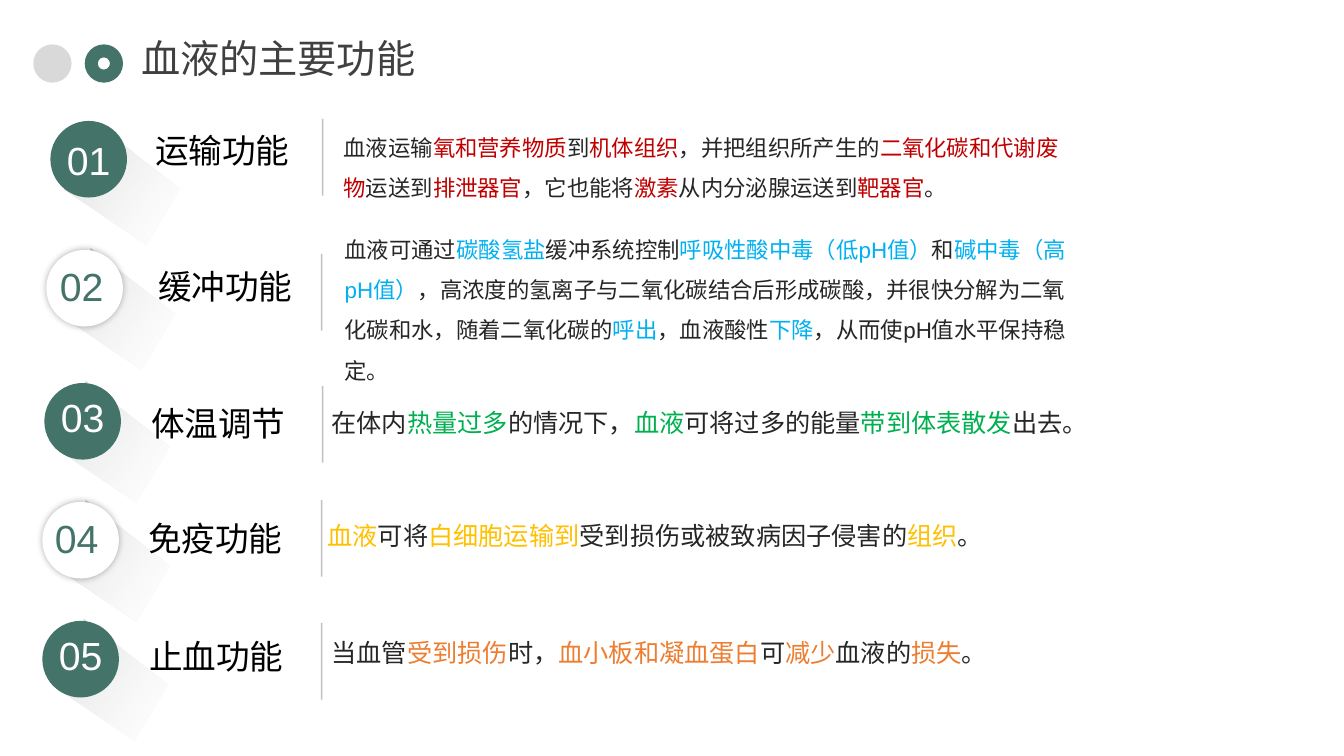
from dataclasses import dataclass

from lxml import etree
from pptx import Presentation
from pptx.dml.color import RGBColor
from pptx.enum.shapes import MSO_CONNECTOR, MSO_SHAPE
from pptx.enum.text import MSO_ANCHOR, MSO_AUTO_SIZE, PP_ALIGN
from pptx.oxml import parse_xml
from pptx.oxml.ns import nsdecls, qn
from pptx.util import Inches, Pt

GREEN = RGBColor(0x44, 0x74, 0x69)
LIGHT_GRAY = RGBColor(0xD9, 0xD9, 0xD9)
RULE_GRAY = RGBColor(0x80, 0x80, 0x80)
TITLE_GRAY = RGBColor(0x40, 0x40, 0x40)
BODY_GRAY = RGBColor(0x26, 0x26, 0x26)
BLACK = RGBColor(0, 0, 0)
WHITE = RGBColor(0xFF, 0xFF, 0xFF)
RED = RGBColor(0xC0, 0, 0)
BLUE = RGBColor(0, 0xB0, 0xF0)
LEAF = RGBColor(0, 0xB0, 0x50)
GOLD = RGBColor(0xFF, 0xC0, 0)
ORANGE = RGBColor(0xED, 0x7D, 0x31)

FONT = "Arial"
CIRCLE_SIZE = 0.76
RAY_CORNERS = [(0, 0.59), (0.42, 0), (1.12, 0.78), (0.7, 1.27)]
RAY_GRADIENT = f"""<a:gradFill rotWithShape="1" {nsdecls('a')}><a:gsLst>
<a:gs pos="0"><a:srgbClr val="F6F8FC"><a:alpha val="0"/></a:srgbClr></a:gs>
<a:gs pos="65000"><a:srgbClr val="CCCDCE"><a:alpha val="40000"/></a:srgbClr></a:gs>
<a:gs pos="100000"><a:srgbClr val="BFBFBF"/></a:gs>
</a:gsLst><a:lin ang="13500000" scaled="0"/></a:gradFill>"""
CIRCLE_GLOW = f"""<a:effectLst {nsdecls('a')}><a:outerShdw blurRad="63500" dist="0" dir="0">
<a:srgbClr val="000000"><a:alpha val="30000"/></a:srgbClr></a:outerShdw></a:effectLst>"""


@dataclass
class BloodFunction:
    number: str
    heading: str
    description: str
    highlight: RGBColor
    circle: tuple[float, float]
    ray: tuple[float, float]
    number_at: tuple[float, float]
    heading_at: tuple[float, float]
    rule_at: tuple[float, float]
    description_at: tuple[float, float]
    description_height: float = 0.35
    size: int = 18
    spacing: object = Pt(18)
    filled: bool = True


FUNCTIONS = [
    BloodFunction(
        "01", "运输功能",
        "血液运输|氧和营养物质|到|机体组织|，并把组织所产生的|二氧化碳和代谢废物|运送到|排泄器官|"
        "，它也能将|激素|从内分泌腺运送到|靶器官|。",
        RED, (0.5, 1.2), (0.64, 1.19), (0.25, 1.3), (1.44, 1.24), (3.2, 1.18),
        (3.31, 1.15), 0.86, 16, 1.5),
    BloodFunction(
        "02", "缓冲功能",
        "血液可通过|碳酸氢盐|缓冲系统控制|呼吸性酸中毒（低pH值）|和|碱中毒（高pH值）|"
        "，高浓度的氢离子与二氧化碳结合后形成碳酸，并很快分解为二氧化碳和水，随着二氧化碳的|"
        "呼出|，血液酸性|下降|，从而使pH值水平保持稳定。",
        BLUE, (0.46, 2.48), (0.59, 2.43), (0.18, 2.55), (1.47, 2.59), (3.19, 2.52),
        (3.32, 2.16), 1.67, 16, 1.5, filled=False),
    BloodFunction(
        "03", "体温调节",
        "在体内|热量过多|的情况下，|血液|可将过多的能量|带到体表散发|出去。",
        LEAF, (0.44, 3.8), (0.54, 3.75), (0.19, 3.85), (1.4, 3.95), (3.2, 3.83),
        (3.19, 4.04)),
    BloodFunction(
        "04", "免疫功能",
        "|血液|可将|白细胞运输到|受到损伤或被致病因子侵害的|组织|。",
        GOLD, (0.42, 4.98), (0.54, 4.93), (0.13, 5.05), (1.37, 5.09), (3.19, 4.96),
        (3.15, 5.16), filled=False),
    BloodFunction(
        "05", "止血功能",
        "当血管|受到损伤|时，|血小板和凝血蛋白|可|减少|血液的|损失|。",
        ORANGE, (0.42, 6.16), (0.52, 6.11), (0.17, 6.21), (1.38, 6.26), (3.19, 6.18),
        (3.19, 6.32)),
]


def write(holder, text: str, *, size: int, color: RGBColor, highlight: RGBColor = BLACK,
          align: PP_ALIGN = PP_ALIGN.LEFT, spacing: object = 1.0) -> None:
    frame = holder.text_frame
    frame.word_wrap = True
    frame.auto_size = MSO_AUTO_SIZE.SHAPE_TO_FIT_TEXT
    frame.vertical_anchor = MSO_ANCHOR.TOP
    paragraph = frame.paragraphs[0]
    paragraph.alignment = align
    paragraph.line_spacing = spacing
    for index, part in enumerate(text.split("|")):
        if part:
            run = paragraph.add_run()
            run.text = part
            run.font.name = FONT
            run.font.size = Pt(size)
            run.font.color.rgb = highlight if index % 2 else color


def add_text(shapes, at: tuple[float, float], width: float, height: float,
             text: str, **style) -> None:
    box = shapes.add_textbox(*map(Inches, (*at, width, height)))
    write(box, text, **style)


def add_disc(shapes, kind: MSO_SHAPE, at: tuple[float, float], size: float,
             color: RGBColor):
    disc = shapes.add_shape(kind, *map(Inches, (*at, size, size)))
    disc.shadow.inherit = False
    disc.fill.solid()
    disc.fill.fore_color.rgb = color
    disc.line.fill.background()
    return disc


def add_ray(shapes, at: tuple[float, float]) -> None:
    left, top = at
    corners = [(Inches(left + x), Inches(top + y)) for x, y in RAY_CORNERS]
    builder = shapes.build_freeform(*corners[0])
    builder.add_line_segments(corners[1:], close=True)
    ray = builder.convert_to_shape()
    ray.rotation = 350.1
    ray.shadow.inherit = False
    ray.line.fill.background()
    ray.element.spPr.find(qn("a:custGeom")).addnext(parse_xml(RAY_GRADIENT))


def add_badge(shapes, function: BloodFunction) -> None:
    badge = shapes.add_group_shape().shapes
    add_ray(badge, function.ray)
    disc_color, number_color = (GREEN, WHITE) if function.filled else (WHITE, GREEN)
    disc = add_disc(badge, MSO_SHAPE.OVAL, function.circle, CIRCLE_SIZE, disc_color)
    if not function.filled:
        properties = disc.element.spPr
        properties.replace(properties.find(qn("a:effectLst")), parse_xml(CIRCLE_GLOW))
    add_text(badge, function.number_at, 1.26, 0.57, function.number,
             size=28, color=number_color, align=PP_ALIGN.CENTER)


def add_rule(shapes, at: tuple[float, float]) -> None:
    left, top = at
    rule = shapes.add_connector(
        MSO_CONNECTOR.STRAIGHT, *map(Inches, (left, top, left, top + CIRCLE_SIZE)))
    rule.line.color.rgb = RULE_GRAY
    rule.line.width = Pt(1)
    properties = rule.element.spPr
    gray = next(properties.iter(qn("a:srgbClr")))
    etree.SubElement(gray, qn("a:alpha"), val="49000")
    etree.SubElement(properties, qn("a:effectLst"))


def add_function(shapes, function: BloodFunction) -> None:
    add_rule(shapes, function.rule_at)
    add_badge(shapes, function)
    add_text(shapes, function.heading_at, 1.88, 0.5, function.heading,
             size=24, color=BLACK)
    add_text(shapes, function.description_at, 7.45, function.description_height,
             function.description, size=function.size, color=BODY_GRAY,
             highlight=function.highlight, spacing=function.spacing)


def main() -> None:
    presentation = Presentation()
    presentation.slide_width = Inches(13.33)
    presentation.slide_height = Inches(7.5)
    slide = presentation.slides.add_slide(presentation.slide_layouts[5])
    shapes = slide.shapes

    title = shapes.title
    title.left, title.top, title.width, title.height = map(Inches, (1.3, 0.29, 3.48, 0.57))
    write(title, "血液的主要功能", size=28, color=TITLE_GRAY, align=PP_ALIGN.JUSTIFY)
    add_disc(shapes, MSO_SHAPE.OVAL, (0.33, 0.44), 0.38, LIGHT_GRAY)
    ring = add_disc(shapes, MSO_SHAPE.DONUT, (0.84, 0.44), 0.38, GREEN)
    ring.adjustments[0] = 0.34

    for function in FUNCTIONS:
        add_function(shapes, function)

    presentation.save("out.pptx")


if __name__ == "__main__":
    main()
